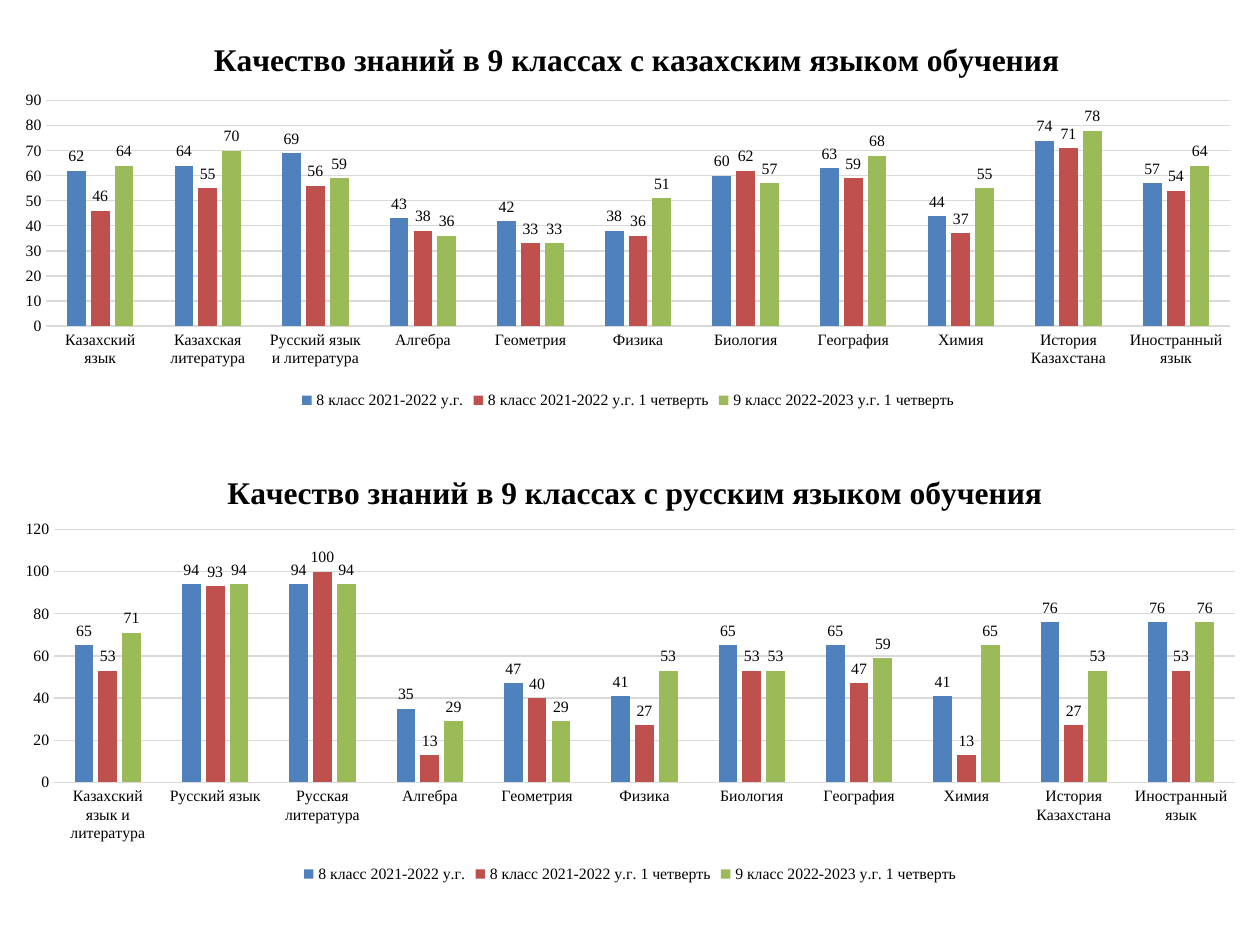
from dataclasses import dataclass

from pptx import Presentation
from pptx.chart.data import CategoryChartData
from pptx.dml.color import RGBColor
from pptx.enum.chart import XL_CHART_TYPE, XL_LABEL_POSITION, XL_LEGEND_POSITION, XL_TICK_MARK
from pptx.oxml import parse_xml
from pptx.oxml.ns import nsdecls, qn
from pptx.util import Inches, Pt


@dataclass(frozen=True)
class Theme:
    font = "Times New Roman"
    text = RGBColor.from_string("000000")
    grid = RGBColor.from_string("D9D9D9")
    bars = tuple(RGBColor.from_string(c) for c in ("4F81BD", "C0504D", "9BBB59"))
    title_size = Pt(18)
    label_size = Pt(9)
    base_size = Pt(10)
    line_width = Pt(0.75)


theme = Theme()


def style_font(font, size, bold=False):
    font.name = theme.font
    font.size = size
    font.bold = bold
    font.color.rgb = theme.text


def place(element, position, **fractions):
    for layout in element.findall(qn("c:layout")):
        element.remove(layout)
    target = '<c:layoutTarget val="inner"/>' if "w" in fractions else ""
    modes = "".join(f'<c:{side}Mode val="edge"/>' for side in "xy")
    values = "".join(f'<c:{key} val="{value}"/>' for key, value in fractions.items())
    element.insert(position, parse_xml(
        f"<c:layout {nsdecls('c')}><c:manualLayout>{target}{modes}{values}</c:manualLayout></c:layout>"))


periods = ["8 класс 2021-2022 у.г.", "8 класс 2021-2022 у.г. 1 четверть",
           "9 класс 2022-2023 у.г. 1 четверть"]
shared_subjects = ["Алгебра", "Геометрия", "Физика", "Биология", "География", "Химия",
                   "История Казахстана", "Иностранный язык"]
classes = [
    {
        "title": "Качество знаний в 9 классах с казахским языком обучения",
        "frame": (0.01, 0.13, 9.95, 3.16),
        "title_at": {"x": 0.165, "y": 0.045},
        "plot": {"x": 0.036, "y": 0.212, "w": 0.944, "h": 0.566},
        "maximum": 90, "step": 10,
        "languages": ["Казахский язык", "Казахская литература", "Русский язык и литература"],
        "quality": [
            [62, 64, 69, 43, 42, 38, 60, 63, 44, 74, 57],
            [46, 55, 56, 38, 33, 36, 62, 59, 37, 71, 54],
            [64, 70, 59, 36, 33, 51, 57, 68, 55, 78, 64],
        ],
    },
    {
        "title": "Качество знаний в 9 классах с русским языком обучения",
        "frame": (0, 3.51, 10, 3.54),
        "title_at": {"x": 0.176, "y": 0.056},
        "plot": {"x": 0.043, "y": 0.196, "w": 0.937, "h": 0.567},
        "maximum": 120, "step": 20,
        "languages": ["Казахский язык и литература", "Русский язык", "Русская литература"],
        "quality": [
            [65, 94, 94, 35, 47, 41, 65, 65, 41, 76, 76],
            [53, 93, 100, 13, 40, 27, 53, 47, 13, 27, 53],
            [71, 94, 94, 29, 29, 53, 53, 59, 65, 53, 76],
        ],
    },
]

presentation = Presentation()
presentation.slide_width = Inches(10)
presentation.slide_height = Inches(7.5)
slide = presentation.slides.add_slide(presentation.slide_layouts[6])

for group in classes:
    results = CategoryChartData(number_format="0")
    results.categories = group["languages"] + shared_subjects
    for period, quality in zip(periods, group["quality"]):
        results.add_series(period, quality)
    frame = [Inches(length) for length in group["frame"]]
    chart = slide.shapes.add_chart(XL_CHART_TYPE.COLUMN_CLUSTERED, *frame, results).chart
    style_font(chart.font, theme.base_size)

    chart.has_title = True
    heading = chart.chart_title.text_frame
    heading.text = group["title"]
    style_font(heading.paragraphs[0].runs[0].font, theme.title_size, bold=True)
    chart.chart_title.include_in_layout = False
    place(chart.chart_title._element, 1, **group["title_at"])
    place(chart._chartSpace.chart.plotArea, 0, **group["plot"])

    chart.has_legend = True
    chart.legend.position = XL_LEGEND_POSITION.BOTTOM
    chart.legend.include_in_layout = False
    style_font(chart.legend.font, theme.label_size)

    subjects, scale = chart.category_axis, chart.value_axis
    for axis in (subjects, scale):
        axis.major_tick_mark = axis.minor_tick_mark = XL_TICK_MARK.NONE
        style_font(axis.tick_labels.font, theme.label_size)
    scale.minimum_scale = 0
    scale.maximum_scale = group["maximum"]
    scale.major_unit = group["step"]
    scale.tick_labels.number_format = "0"
    scale.tick_labels.number_format_is_linked = False
    scale.format.line.fill.background()
    for line in (subjects.format.line, scale.major_gridlines.format.line):
        line.color.rgb = theme.grid
        line.width = theme.line_width

    columns = chart.plots[0]
    columns.gap_width = 219
    columns.overlap = -27
    columns.vary_by_categories = False
    for series, color in zip(columns.series, theme.bars):
        series.format.fill.solid()
        series.format.fill.fore_color.rgb = color
        labels = series.data_labels
        labels.show_value = True
        labels.position = XL_LABEL_POSITION.OUTSIDE_END
        labels.number_format = "0"
        labels.number_format_is_linked = False
        style_font(labels.font, theme.label_size)

presentation.save("out.pptx")
